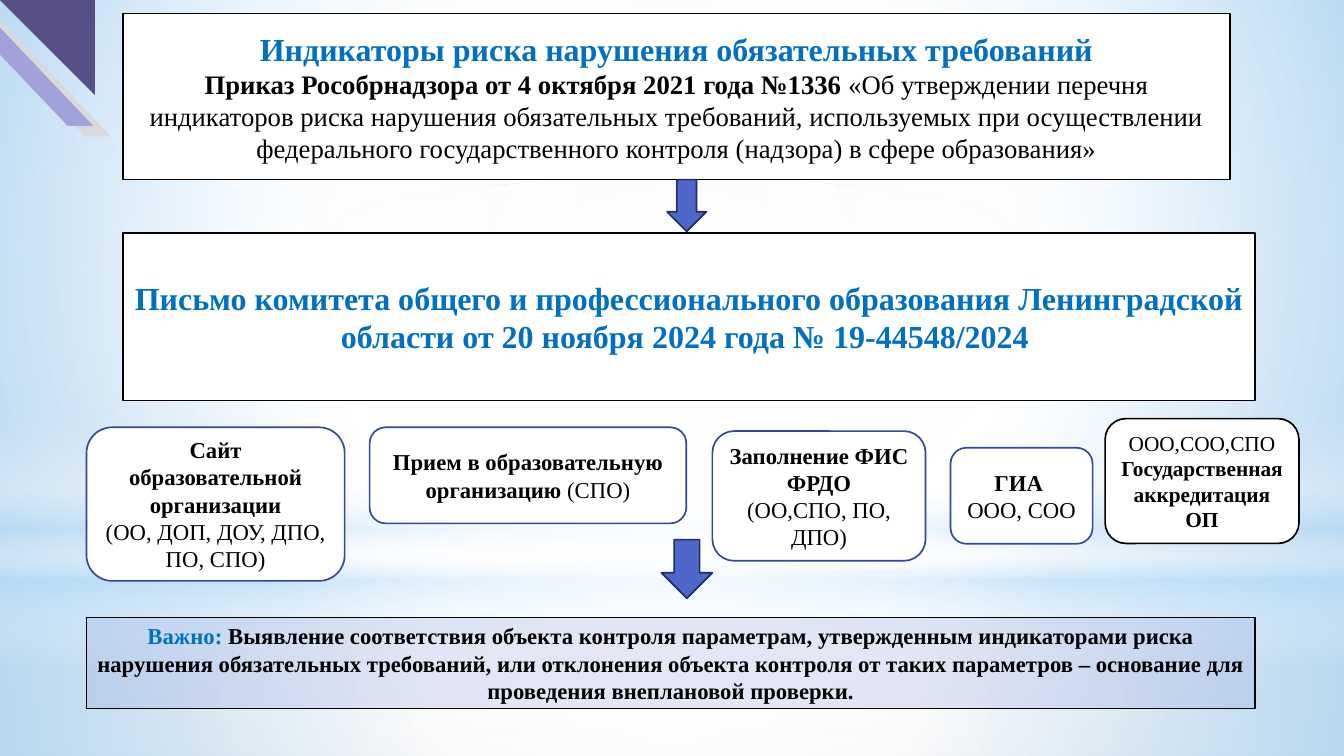
"""Build a slide on risk indicators for breaches of mandatory requirements."""
from pptx import Presentation
from pptx.dml.color import RGBColor
from pptx.enum.shapes import MSO_SHAPE
from pptx.enum.text import MSO_ANCHOR, PP_ALIGN
from pptx.oxml import parse_xml
from pptx.oxml.ns import nsdecls, qn
from pptx.util import Cm, Pt

RECT, ROUND = MSO_SHAPE.RECTANGLE, MSO_SHAPE.ROUNDED_RECTANGLE
OVAL, ARROW = MSO_SHAPE.OVAL, MSO_SHAPE.DOWN_ARROW
SLANT, CORNER = MSO_SHAPE.PARALLELOGRAM, MSO_SHAPE.RIGHT_TRIANGLE
CENTER, MIDDLE = PP_ALIGN.CENTER, MSO_ANCHOR.MIDDLE
FONT = "Times New Roman"
WIDE, HIGH = 35.56, 19.99

HEX = {
    "white": "FFFFFF", "black": "000000", "sky": "B4DCFA", "blue": "0070C0",
    "edge": "31489F", "arrow": "4E67C8", "rim": "1F2E69", "note": "95A4DE",
    "pale": "F4F4F4", "ash": "CCCCCC", "gray": "D9D9D9", "lilac": "A2A2DA",
    "plum": "565087",
}

BACK = [(0, "pale", 100), (60, "white", 100), (100, "ash", 100)]
MID = (50, 50, 50, 50)
BANDS = [
    (RECT, (0, 14.88, WIDE, 5.11), MID,
     [(0, "white", 91), (37, "white", 76), (100, "sky", 79)]),
    (RECT, (0, 0, WIDE, 14.88), MID,
     [(0, "white", 89), (48, "white", 62), (100, "sky", 79)]),
    (RECT, (0, 11, WIDE, 6.65), None,
     [(0, "white", 0), (29, "white", 30), (45, "sky", 40),
      (55, "white", 26), (65, "sky", 60), (100, "white", 0)]),
    (OVAL, (0, 4.67, WIDE, 14.88), MID, [(0, "white", 100), (56, "white", 0)]),
]
DECOR = [
    (SLANT, (-0.91, 0.28, 3.84, 3.33), "gray", ["flipH"]),
    (SLANT, (-1.37, 0, 3.84, 3.33), "lilac", ["flipH"]),
    (CORNER, (0, 0, 2.51, 2.51), "plum", ["flipH", "flipV"]),
]
ARROWS = [(17.65, 4.75, 1.04, 1.37), (17.5, 14.27, 1.35, 1.55)]

LETTER = [[("Письмо комитета общего и профессионального образования Ленинградской "
            "области от 20 ноября 2024 года № 19-44548/2024 ", True, 24, "blue")]]
ORDER = [
    [("Индикаторы риска нарушения обязательных требований", True, 24, "blue")],
    [("Приказ Рособрнадзора от 4 октября 2021 года №1336 ", True, 20, "black"),
     ("«Об утверждении перечня индикаторов риска нарушения обязательных "
      "требований, используемых при осуществлении федерального государственного "
      "контроля (надзора) в сфере образования»", False, 20, "black")],
]
NOTE = [[
    ("Важно: ", True, 17, "blue"),
    ("Выявление соответствия объекта контроля параметрам, утвержденным "
     "индикаторами риска нарушения обязательных требований, или отклонения "
     "объекта контроля от таких параметров – основание для проведения "
     "внеплановой проверки.", True, 17, "black"),
]]
PANELS = [
    ((3.25, 6.17, 29.95, 4.42), "white", 100, LETTER),
    ((3.25, 0.36, 29.29, 4.39), "white", 100, ORDER),
    ((2.29, 16.33, 30.91, 2.41), "note", 25, NOTE),
]
CARDS = [
    ((2.29, 11.3, 6.83, 4.06), "edge", 17,
     [[("Сайт образовательной организации", True)],
      [("(ОО, ДОП, ДОУ, ДПО, ПО, СПО)", False)]]),
    ((9.78, 11.3, 8.38, 2.54), "edge", 17,
     [[("Прием в образовательную организацию ", True), ("(СПО)", False)]]),
    ((18.85, 11.4, 5.64, 3.43), "edge", 17,
     [[("Заполнение ФИС ФРДО", True)], [("(ОО,СПО, ПО, ДПО)", False)]]),
    ((25.15, 11.84, 3.76, 2.54), "edge", 17,
     [[("ГИА ", True)], [("ООО, СОО", False)]]),
    ((29.24, 11.07, 5.13, 3.3), "black", 16,
     [[("ООО,СОО,СПО", False)], [("Государственная аккредитация ОП", True)]]),
]


def rgb(name):
    return RGBColor.from_string(HEX[name])


def blend(root, stops, focus=None):
    marks = "".join(
        f'<a:gs pos="{pos * 1000}"><a:srgbClr val="{HEX[name]}">'
        f'<a:alpha val="{alpha * 1000}"/></a:srgbClr></a:gs>'
        for pos, name, alpha in stops)
    if focus:
        sides = " ".join(f'{side}="{num * 1000}"' for side, num in zip("ltrb", focus))
        way = f'<a:path path="circle"><a:fillToRect {sides}/></a:path>'
    else:
        way = '<a:lin ang="5400000" scaled="0"/>'
    grad = parse_xml(f'<a:gradFill {nsdecls("a")} rotWithShape="1">'
                     f'<a:gsLst>{marks}</a:gsLst>{way}</a:gradFill>')
    solid = root.find(qn("a:solidFill"))
    root.replace(solid, grad)


def draw(slide, kind, place, fill, line=None, alpha=100):
    shape = slide.shapes.add_shape(kind, *map(Cm, place))
    shape.shadow.inherit = False
    shape.fill.solid()
    shape.fill.fore_color.rgb = rgb(fill)
    if alpha < 100:
        tint = shape._element.spPr.find(qn("a:solidFill"))[0]
        tint.append(parse_xml(f'<a:alpha {nsdecls("a")} val="{alpha * 1000}"/>'))
    if line:
        shape.line.color.rgb = rgb(line)
        shape.line.width = Pt(1.25)
    else:
        shape.line.fill.background()
    return shape


def put(para, text, bold=False, size=17, color="black"):
    run = para.add_run()
    run.text = text
    run.font.name = FONT
    run.font.size = Pt(size)
    run.font.bold = bold
    run.font.color.rgb = rgb(color)


def write(shape, paras, size=17):
    frame = shape.text_frame
    frame.word_wrap = True
    frame.vertical_anchor = MIDDLE
    for num, runs in enumerate(paras):
        para = frame.add_paragraph() if num else frame.paragraphs[0]
        para.alignment = CENTER
        for text, bold, *look in runs:
            put(para, text, bold=bold, **dict(zip(("size", "color"), look or [size])))


def main():
    deck = Presentation()
    deck.slide_width, deck.slide_height = Cm(WIDE), Cm(HIGH)
    slide = deck.slides.add_slide(deck.slide_layouts[6])
    slide.background.fill.solid()
    blend(slide._element.find(".//" + qn("p:bgPr")), BACK, (20, 10, 20, 60))

    for kind, place, focus, stops in BANDS:
        blend(draw(slide, kind, place, "white")._element.spPr, stops, focus)
    for kind, place, fill, flips in DECOR:
        shape = draw(slide, kind, place, fill)
        for flip in flips:
            shape._element.spPr.xfrm.set(flip, "1")
        if kind == SLANT:
            shape.adjustments[0] = 0.95
    for place, fill, alpha, paras in PANELS:
        write(draw(slide, RECT, place, fill, "black", alpha), paras)
    for place in ARROWS:
        draw(slide, ARROW, place, "arrow", "rim")
    for place, line, size, paras in CARDS:
        write(draw(slide, ROUND, place, "white", line), paras, size)
    deck.save("out.pptx")


if __name__ == "__main__":
    main()
